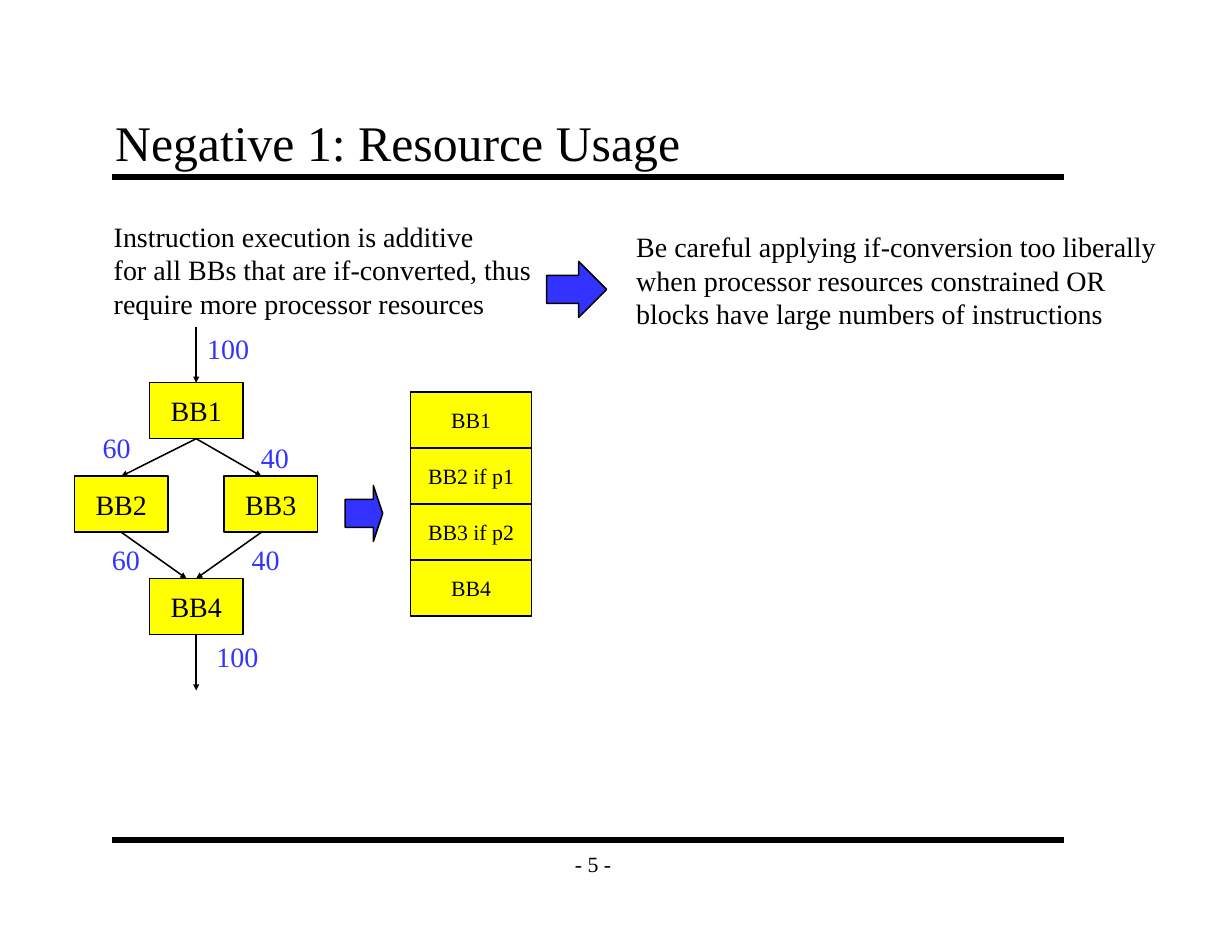
from lxml import etree
from pptx import Presentation
from pptx import util as u
from pptx.dml.color import RGBColor
from pptx.enum import shapes, text
from pptx.oxml.ns import qn

BLACK = RGBColor(0x00, 0x00, 0x00)
YELLOW = RGBColor(0xFF, 0xFF, 0x00)
BLUE = RGBColor(0x33, 0x33, 0xFF)
FONT = "Times New Roman"
BOX_H = 1.27


def set_text(sp, content, size, color=BLACK, align=text.PP_ALIGN.LEFT, **frame):
    """Fill a shape's text frame and format its frame, paragraphs and runs."""
    tf = sp.text_frame
    tf.text = content
    for name, value in {"word_wrap": False, **frame}.items():
        setattr(tf, name, value)
    for p in tf.paragraphs:
        p.alignment = align
        for r in p.runs:
            for name, value in {"name": FONT, "size": u.Pt(size)}.items():
                setattr(r.font, name, value)
            r.font.color.rgb = color


def add_title(slide, content):
    """Place and format the title placeholder."""
    sp = slide.shapes.title
    place = {"left": 2.33, "top": 2.36, "width": 21.59, "height": 1.69}
    for name, value in place.items():
        setattr(sp, name, u.Cm(value))
    set_text(sp, content, 32, word_wrap=True, auto_size=text.MSO_AUTO_SIZE.NONE,
             vertical_anchor=text.MSO_ANCHOR.BOTTOM,
             margin_left=u.Cm(0.28), margin_bottom=u.Cm(0.15))


def add_label(slide, content, left, top, width, height, size=18,
              auto_size=text.MSO_AUTO_SIZE.SHAPE_TO_FIT_TEXT, **fmt):
    """Add a text box that grows with its text unless told otherwise."""
    sp = slide.shapes.add_textbox(u.Cm(left), u.Cm(top), u.Cm(width), u.Cm(height))
    set_text(sp, content, size, auto_size=auto_size, **fmt)


def add_filled(slide, kind, left, top, width, fill):
    """Add a black-outlined preset shape of the common height."""
    sp = slide.shapes.add_shape(kind, u.Cm(left), u.Cm(top), u.Cm(width), u.Cm(BOX_H))
    sp.shadow.inherit = False
    sp.fill.solid()
    sp.fill.fore_color.rgb = fill
    sp.line.color.rgb = BLACK
    sp.line.width = u.Pt(1)
    return sp


def add_block(slide, content, left, top, width=2.12, size=18):
    """Add a yellow basic block."""
    sp = add_filled(slide, shapes.MSO_SHAPE.RECTANGLE, left, top, width, YELLOW)
    set_text(sp, content, size, align=text.PP_ALIGN.CENTER,
             vertical_anchor=text.MSO_ANCHOR.MIDDLE)


def add_block_arrow(slide, left, top, width, head):
    """Add a blue right arrow with the given head proportion."""
    sp = add_filled(slide, shapes.MSO_SHAPE.RIGHT_ARROW, left, top, width, BLUE)
    sp.adjustments[0] = 0.5
    sp.adjustments[1] = head


def add_line(slide, x1, y1, x2, y2, width=1, arrow=True):
    """Add a straight black line, with a small arrowhead at its end if asked."""
    ends = [u.Cm(v) for v in (x1, y1, x2, y2)]
    sp = slide.shapes.add_connector(shapes.MSO_CONNECTOR.STRAIGHT, *ends)
    sp.line.color.rgb = BLACK
    sp.line.width = u.Pt(width)
    if arrow:
        ln = sp._element.spPr.find(qn("a:ln"))
        etree.SubElement(ln, qn("a:tailEnd"), type="triangle", w="sm", len="sm")
    etree.SubElement(sp._element.spPr, qn("a:effectLst"))


def add_flow_graph(slide):
    """Draw the control flow graph with its edge weights."""
    for content, left, top in (("BB1", 3.39, 8.68), ("BB2", 1.69, 10.8),
                               ("BB3", 5.08, 10.8), ("BB4", 3.39, 13.12)):
        add_block(slide, content, left, top)
    mid, left, right = 4.45, 2.75, 5.93
    for edge in ((mid, 7.41, mid, 8.68), (mid, 9.95, left, 10.8),
                 (mid, 9.95, right, 10.8), (left, 12.07, 4.23, 13.12),
                 (right, 12.07, mid, 13.12), (mid, 14.39, mid, 15.66)):
        add_line(slide, *edge)
    for content, x, y in (("100", 4.45, 7.4), ("60", 2.08, 9.63), ("40", 5.67, 9.86),
                          ("60", 2.29, 12.17), ("40", 5.46, 12.17), ("100", 4.66, 14.38)):
        add_label(slide, content, x, y, 0.32 * len(content) + 0.52, 1.02, color=BLUE)


def main():
    """Build and save the slide."""
    prs = Presentation()
    prs.slide_width, prs.slide_height = u.Cm(27.94), u.Cm(21.59)
    slide = prs.slides.add_slide(prs.slide_layouts[5])
    for y in (4.02, 19.05):
        add_line(slide, 2.54, y, 24.13, y, width=4, arrow=False)
    add_label(slide, "- 5 -", 12.5, 19.05, 1.9, 1.06, size=14,
              auto_size=text.MSO_AUTO_SIZE.NONE, align=text.PP_ALIGN.CENTER,
              vertical_anchor=text.MSO_ANCHOR.MIDDLE)
    add_title(slide, "Negative 1: Resource Usage")
    add_flow_graph(slide)
    add_label(slide, "Instruction execution is additive\n"
              "for all BBs that are if-converted, thus\v"
              "require more processor resources", 2.33, 4.85, 10.08, 2.57)
    for i, content in enumerate(("BB1", "BB2 if p1", "BB3 if p2", "BB4")):
        add_block(slide, content, 9.31, 8.89 + i * BOX_H, width=2.75, size=14)
    add_block_arrow(slide, 7.83, 11.01, 0.85, 0.25)
    add_label(slide, "Be careful applying if-conversion too liberally\v"
              "when processor resources constrained OR\v"
              "blocks have large numbers of instructions", 14.18, 5.08, 12.42, 2.57)
    add_block_arrow(slide, 12.4, 5.93, 1.36, 0.5)
    prs.save("out.pptx")


if __name__ == "__main__":
    main()
